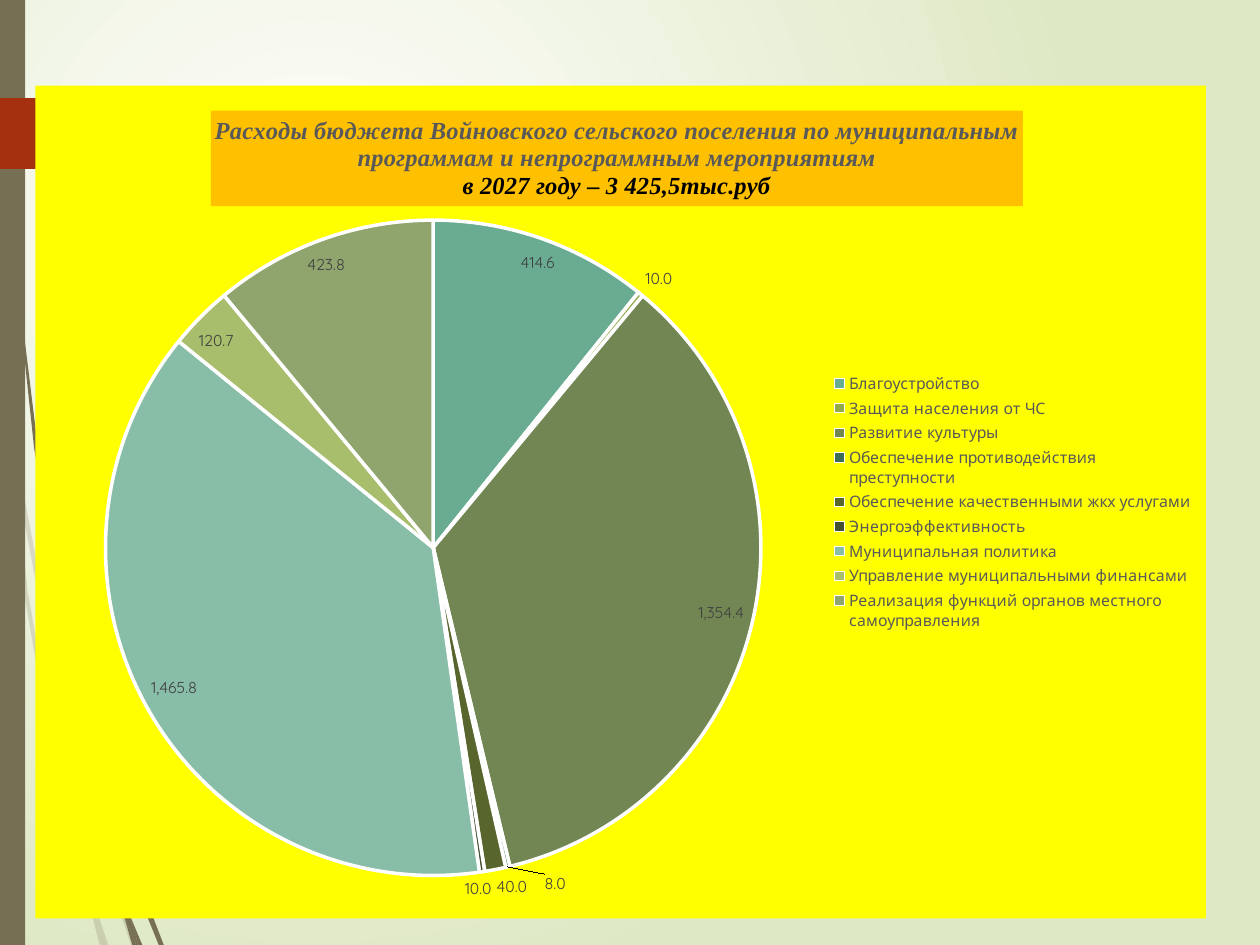
from dataclasses import dataclass

from lxml.etree import SubElement
from pptx import Presentation
from pptx.chart.data import CategoryChartData
from pptx.dml.color import RGBColor
from pptx.enum.chart import XL_CHART_TYPE, XL_LABEL_POSITION, XL_LEGEND_POSITION
from pptx.enum.shapes import MSO_SHAPE
from pptx.oxml import parse_xml
from pptx.oxml.ns import nsdecls, qn
from pptx.util import Inches, Pt

COLS, ROWS = 10, 7.5  # grid of one-inch cells
FINE = 100  # freeform steps in a cell


@dataclass(frozen=True)
class Theme:
    bark: str = "766F54"
    rust: str = "A53010"
    white: str = "FFFFFF"
    mist: str = "DFE8C4"
    panel: str = "FFFF00"
    band: str = "FFC000"
    black: str = "000000"
    grey: str = "595959"
    dark: str = "404040"
    slices: tuple = ("6AAC91", "92AA4C", "728653", "3C6B58", "58662E",
                     "445032", "88BDA7", "A9BE6D", "90A56E")
    body: str = "Quicksand"
    serif: str = "Times New Roman"
    head: int = 14
    base: int = 10
    small: int = 9


COSTS = {
    "Благоустройство": 414.6,
    "Защита населения от ЧС": 10,
    "Развитие культуры": 1354.4,
    "Обеспечение противодействия преступности": 8,
    "Обеспечение качественными жкх услугами": 40,
    "Энергоэффективность": 10,
    "Муниципальная политика": 1465.8,
    "Управление муниципальными финансами": 120.7,
    "Реализация функций органов местного самоуправления": 423.8,
}
HEAD = (
    "Расходы бюджета Войновского сельского поселения по муниципальным "
    "программам и непрограммным мероприятиям",
    "в 2027 году – 3 425,5тыс.руб",
)
FORMAT = "#,##0.0"

PALE = (
    [(0.4, 5.22), (0.59, 5.99), (0.59, 5.86), (0.43, 5.2), (0.1, 3.45),
     (0.12, 3.76)],
    [(0.64, 6.07), (0.61, 5.96), (0.61, 6.1), (0.85, 6.94), (1.04, 7.5),
     (1.08, 7.5), (0.88, 6.92)],
    [(0.83, 7.5), (0.86, 7.5), (0.73, 7.11)],
    [(0.64, 6.83), (0.48, 6.19), (0.22, 4.69), (0.12, 3.76), (0.08, 3.5),
     (0.19, 4.7), (0.45, 6.21), (0.64, 6.93), (0.7, 7.14), (0.69, 7.07)],
    [(0.7, 7.14), (0.79, 7.5), (0.82, 7.5)],
    [(0.67, 6.92), (0.65, 6.83), (0.69, 7.07), (0.7, 7.14), (0.82, 7.5),
     (0.83, 7.5), (0.73, 7.11)],
)
SOLID = (
    [(0.05, 1.1), (0.14, 2.33), (0.27, 3.55), (0.46, 4.77), (0.47, 4.81),
     (0.45, 4.57), (0.45, 4.53), (0.3, 3.55), (0.15, 2.32), (0.06, 1.09),
     (0.04, 0.48), (0.03, 0), (0.02, 0), (0.03, 0.48)],
    [(0.94, 6.49), (0.91, 6.41), (0.91, 6.56), (1.09, 7.08), (1.26, 7.5),
     (1.3, 7.5), (1.13, 7.06)],
    [(1.1, 7.5), (1.13, 7.5), (1, 7.19)],
    [(0.97, 7.22), (1.05, 7.5), (1.08, 7.5)],
    [(0.96, 7.06), (0.91, 6.91), (0.96, 7.17), (0.97, 7.22), (1.08, 7.5),
     (1.1, 7.5), (1, 7.19)],
)


def paint(fill, color):
    fill.solid()
    fill.fore_color.rgb = RGBColor.from_string(color)


def style(font, face, size, color, bold=False, italic=False):
    font.name, font.size = face, Pt(size)
    font.bold, font.italic = bold, italic
    font.color.rgb = RGBColor.from_string(color)


def write(para, text, **form):
    run = para.add_run()
    run.text = text
    style(run.font, **form)


def place(node, after=None, inner=False, **box):
    """Give a chart part a manual layout; box holds shares x, y, w, h."""
    for old in node.findall(qn("c:layout")):
        node.remove(old)
    layout = parse_xml(f"<c:layout {nsdecls('c')}><c:manualLayout/></c:layout>")
    rules = {"layoutTarget": "inner"} if inner else {}
    if after != "c:idx":
        rules.update(xMode="edge", yMode="edge")
    for tag, val in {**rules, **box}.items():
        SubElement(layout[0], qn(f"c:{tag}")).set("val", str(val))
    if after:
        node.find(qn(after)).addnext(layout)
    else:
        node.insert(0, layout)


class Deck:
    def __init__(self, theme):
        self.theme = theme
        self.file = Presentation()
        self.file.slide_width, self.file.slide_height = Inches(COLS), Inches(ROWS)
        self.slide = self.file.slides.add_slide(self.file.slide_layouts[6])

    def ground(self):
        fill = self.slide.background.fill
        fill.gradient()
        for stop, color in zip(fill.gradient_stops, (self.theme.white, self.theme.mist)):
            stop.color.rgb = RGBColor.from_string(color)
        line = self.slide.element.find(".//" + qn("a:lin"))
        line.getparent().replace(line, parse_xml(
            f'<a:path {nsdecls("a")} path="circle"><a:fillToRect l="50000" '
            't="50000" r="100000" b="100000"/></a:path>'))

    def finish(self, shape, color):
        shape.shadow.inherit = False
        paint(shape.fill, color)
        shape.line.fill.background()

    def block(self, kind, col, row, wide, high, color):
        shape = self.slide.shapes.add_shape(
            kind, Inches(col), Inches(row), Inches(wide), Inches(high))
        self.finish(shape, color)

    def blade(self, points, alpha=None):
        first, *rest = [(round(x * FINE), round(y * FINE)) for x, y in points]
        pen = self.slide.shapes.build_freeform(*first, scale=Inches(1) / FINE)
        pen.add_line_segments(rest)
        shape = pen.convert_to_shape()
        self.finish(shape, self.theme.bark)
        if alpha:
            tone = shape.element.spPr.find(".//" + qn("a:srgbClr"))
            SubElement(tone, qn("a:alpha")).set("val", str(alpha * 1000))

    def pie(self, col, row, wide, high):
        look = self.theme
        data = CategoryChartData(number_format=FORMAT)
        data.categories = list(COSTS)
        data.add_series("Series 1", list(COSTS.values()))
        chart = self.slide.shapes.add_chart(
            XL_CHART_TYPE.PIE, Inches(col), Inches(row), Inches(wide),
            Inches(high), data).chart
        style(chart.font, look.body, look.base, look.black)
        root = chart.element
        root.find(qn("c:chart")).addnext(parse_xml(
            f'<c:spPr {nsdecls("c", "a")}><a:solidFill><a:srgbClr '
            f'val="{look.panel}"/></a:solidFill><a:ln><a:noFill/></a:ln></c:spPr>'))
        place(root.find(".//" + qn("c:plotArea")), inner=True,
              x=0.06, y=0.16, w=0.56, h=0.79)
        self.head(chart)
        self.key(chart)
        self.slices(chart)

    def head(self, chart):
        look = self.theme
        title = chart.chart_title
        frame = title.text_frame
        paras = (frame.paragraphs[0], frame.add_paragraph())
        for para, text, color in zip(paras, HEAD, (look.grey, look.black)):
            write(para, text, face=look.serif, size=look.head, color=color,
                  bold=True, italic=True)
        paint(title.format.fill, look.band)
        place(chart.element.find(".//" + qn("c:title")), "c:tx", x=0.15, y=0.03)

    def key(self, chart):
        chart.has_legend = True
        legend = chart.legend
        legend.position = XL_LEGEND_POSITION.RIGHT
        legend.include_in_layout = False
        style(legend.font, self.theme.body, self.theme.small, self.theme.grey)
        place(chart.element.find(".//" + qn("c:legend")), "c:legendPos",
              x=0.68, y=0.34, w=0.31, h=0.32)

    def slices(self, chart):
        look = self.theme
        plot = chart.plots[0]
        plot.vary_by_categories = True
        series = plot.series[0]
        for spot, color in enumerate(look.slices):
            form = series.points[spot].format
            paint(form.fill, color)
            paint(form.line.fill, look.white)
            form.line.width = Pt(2)
        labels = series.data_labels
        labels.show_value = True
        labels.number_format, labels.number_format_is_linked = FORMAT, False
        moved = series.points[3].data_label
        for label in (labels, moved):
            label.position = XL_LABEL_POSITION.BEST_FIT
            style(label.font, look.body, look.small, look.dark)
        place(chart.element.find(".//" + qn("c:dLbl")), "c:idx", x=0.03, y=0)


def main():
    theme = Theme()
    deck = Deck(theme)
    deck.ground()
    for points in PALE:
        deck.blade(points, alpha=20)
    for points in SOLID:
        deck.blade(points)
    deck.block(MSO_SHAPE.RECTANGLE, 0, 0, 0.2, ROWS, theme.bark)
    deck.block(MSO_SHAPE.PENTAGON, 0, 0.78, 1.49, 0.56, theme.rust)
    deck.pie(0.28, 0.68, 9.29, 6.61)
    deck.file.save("out.pptx")


if __name__ == "__main__":
    main()
